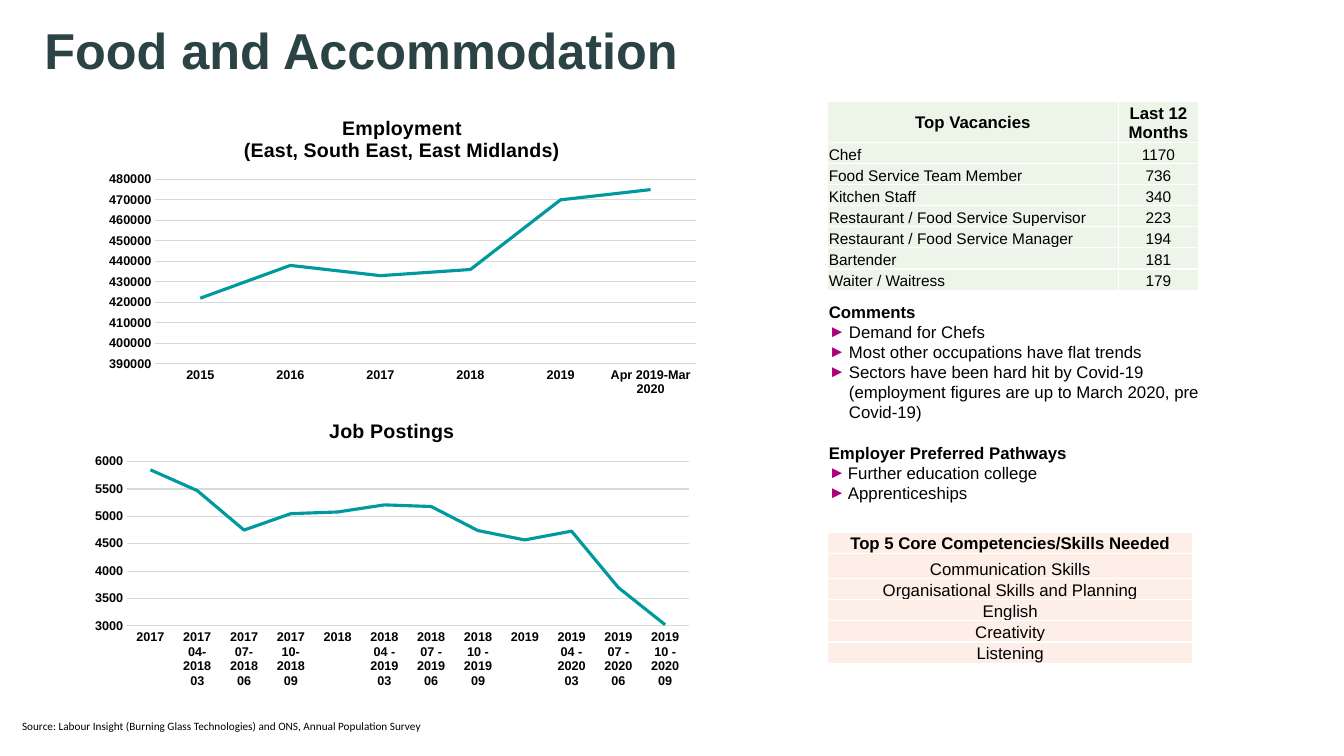
from lxml import etree
from pptx import Presentation
from pptx.chart.data import CategoryChartData
from pptx.dml.color import RGBColor
from pptx.enum.chart import XL_CHART_TYPE as ChartType, XL_TICK_MARK as TickMark
from pptx.enum.text import MSO_ANCHOR as Anchor, MSO_AUTO_SIZE as AutoSize, PP_ALIGN as Align
from pptx.oxml import parse_xml
from pptx.oxml.ns import nsdecls, qn
from pptx.util import Inches, Pt

BLACK, WHITE, SLATE = "000000", "FFFFFF", "2B4345"
TEAL, MAGENTA, GRID = "0099A0", "AD007A", "D9D9D9"
GREEN_TINT, PEACH_TINT = "EDF4E8", "FDEEE8"

EMPLOYMENT = {"2015": 422000, "2016": 438000, "2017": 433000, "2018": 436000,
              "2019": 470000, "Apr 2019-Mar 2020": 475000}
POSTINGS = {"2017": 5850, "2017 04-2018 03": 5470, "2017 07-2018 06": 4750,
            "2017 10-2018 09": 5050, "2018": 5080, "2018 04 - 2019 03": 5210,
            "2018 07 - 2019 06": 5180, "2018 10 - 2019 09": 4740, "2019": 4570,
            "2019 04 - 2020 03": 4730, "2019 07 - 2020 06": 3700,
            "2019 10 - 2020 09": 3020}
VACANCIES = [("Top Vacancies", "Last 12 Months"), ("Chef", "1170"),
             ("Food Service Team Member", "736"), ("Kitchen Staff", "340"),
             ("Restaurant / Food Service Supervisor", "223"),
             ("Restaurant / Food Service Manager", "194"),
             ("Bartender", "181"), ("Waiter / Waitress", "179")]
SKILLS = [("Top 5 Core Competencies/Skills Needed",), ("Communication Skills",),
          ("Organisational Skills and Planning",), ("English",), ("Creativity",),
          ("Listening",)]
NOTES = [("Comments", 0.2, ["Demand for Chefs", "Most other occupations have flat trends",
                            "Sectors have been hard hit by Covid-19 (employment figures "
                            "are up to March 2020, pre Covid-19)"]),
         ("Employer Preferred Pathways", 0.19, ["Further education college",
                                                "Apprenticeships"])]


def color(hex_value):
    return RGBColor.from_string(hex_value)


def style_font(font, size, bold=False, hex_value=BLACK, name="Arial"):
    font.name, font.size, font.bold = name, Pt(size), bold
    font.color.rgb = color(hex_value)


def add_run(paragraph, text, size, **style):
    run = paragraph.add_run()
    run.text = text
    style_font(run.font, size, **style)


def place(shape, box):
    shape.left, shape.top, shape.width, shape.height = (Inches(value) for value in box)


def set_layout(parent, index, chart_box, part_box):
    """Place a chart part, given in inches from the chart's corner."""
    old = parent.find(qn("c:layout"))
    if old is not None:
        parent.remove(old)
    target = '<c:layoutTarget val="inner"/>' if len(part_box) == 4 else ""
    modes = "".join(f'<c:{key}Mode val="edge"/>' for key in "xy")
    sizes = "".join(f'<c:{key} val="{length / whole:.4f}"/>'
                    for key, length, whole in zip("xywh", part_box, chart_box[2:] * 2))
    parent.insert(index, parse_xml(
        f'<c:layout {nsdecls("c")}><c:manualLayout>{target}{modes}{sizes}'
        '</c:manualLayout></c:layout>'))


def add_title(slide, box):
    title = slide.shapes.title
    place(title, box)
    frame = title.text_frame
    frame.vertical_anchor = Anchor.MIDDLE
    frame.auto_size = AutoSize.NONE
    paragraph = frame.paragraphs[0]
    paragraph.alignment = Align.LEFT
    paragraph.line_spacing = 0.9
    add_run(paragraph, "Food and Accommodation", 36, bold=True, hex_value=SLATE)


def add_line_chart(slide, box, title_lines, values, scale, title_at, plot_at):
    data = CategoryChartData()
    data.categories = list(values)
    data.add_series("Series 1", list(values.values()))
    chart = slide.shapes.add_chart(
        ChartType.LINE, *(Inches(value) for value in box), data).chart
    chart.has_legend = False
    style_font(chart.font, 10, bold=True)

    # Title
    chart.has_title = True
    frame = chart.chart_title.text_frame
    for number, line in enumerate(title_lines):
        paragraph = frame.add_paragraph() if number else frame.paragraphs[0]
        add_run(paragraph, line, 14, bold=True)
    set_layout(chart.chart_title._element, 1, box, title_at)
    set_layout(chart._chartSpace.chart.plotArea, 0, box, plot_at)

    # Axes
    category_axis, value_axis = chart.category_axis, chart.value_axis
    for axis in (category_axis, value_axis):
        axis.major_tick_mark = axis.minor_tick_mark = TickMark.NONE
        style_font(axis.tick_labels.font, 9, bold=True)
    category_axis._element.find(qn("c:txPr")).find(qn("a:bodyPr")).set("rot", "0")
    value_axis.minimum_scale, value_axis.maximum_scale, value_axis.major_unit = scale
    value_axis.has_major_gridlines = True
    value_axis.format.line.fill.background()
    for line in (category_axis.format.line, value_axis.major_gridlines.format.line):
        line.color.rgb = color(GRID)
        line.width = Pt(0.75)

    # Line
    chart.plots[0].vary_by_categories = False
    series = chart.plots[0].series[0]
    series.smooth = False
    series.format.line.color.rgb = color(TEAL)
    series.format.line.width = Pt(2.25)


def style_cell(cell, fill):
    cell.margin_left = cell.margin_top = cell.margin_right = Inches(0.01)
    cell.margin_bottom = 0
    properties = cell._tc.get_or_add_tcPr()
    for side in ("lnL", "lnR", "lnT", "lnB"):
        properties.append(parse_xml(
            f'<a:{side} {nsdecls("a")} w="12700"><a:solidFill><a:srgbClr val="{WHITE}"/>'
            f'</a:solidFill></a:{side}>'))
    cell.fill.solid()
    cell.fill.fore_color.rgb = color(fill)


def add_list_table(slide, box, rows, column_widths, row_heights, fill, body_size):
    table = slide.shapes.add_table(len(rows), len(column_widths),
                                   *(Inches(value) for value in box)).table
    table.first_row = table.horz_banding = False
    for column, width in zip(table.columns, column_widths):
        column.width = Inches(width)
    for r, (texts, height) in enumerate(zip(rows, row_heights)):
        table.rows[r].height = Inches(height)
        for c, text in enumerate(texts):
            cell = table.cell(r, c)
            style_cell(cell, fill)
            cell.vertical_anchor = Anchor.MIDDLE if r == c == 0 else Anchor.BOTTOM
            paragraph = cell.text_frame.paragraphs[0]
            left = r > 0 and c == 0 and len(texts) > 1
            paragraph.alignment = Align.LEFT if left else Align.CENTER
            add_run(paragraph, text, body_size if r else 12, bold=r == 0)


def set_bullet(paragraph, indent):
    properties = paragraph._p.get_or_add_pPr()
    properties.set("marL", str(Inches(indent)))
    properties.set("indent", str(-Inches(indent)))
    if not indent:
        etree.SubElement(properties, qn("a:buNone"))
        return
    bullet_color = etree.SubElement(properties, qn("a:buClr"))
    etree.SubElement(bullet_color, qn("a:srgbClr"), val=MAGENTA)
    etree.SubElement(properties, qn("a:buFont"), typeface="Arial")
    etree.SubElement(properties, qn("a:buChar"), char="►")


def add_notes_list(slide, box):
    body = slide.placeholders[1]
    place(body, box)
    frame = body.text_frame
    frame.word_wrap = True
    frame.auto_size = AutoSize.NONE
    frame.vertical_anchor = Anchor.TOP
    paragraph = frame.paragraphs[0]
    for section, (heading, indent, items) in enumerate(NOTES):
        if section:
            paragraph = frame.add_paragraph()
        set_bullet(paragraph, 0)
        paragraph.space_before = Pt(14.5 if section else 0)
        add_run(paragraph, heading, 12, bold=True)
        for item in items:
            paragraph = frame.add_paragraph()
            set_bullet(paragraph, indent)
            paragraph.space_before = Pt(0)
            add_run(paragraph, item, 12)


def add_source(slide, box):
    frame = slide.shapes.add_textbox(*(Inches(value) for value in box)).text_frame
    frame.word_wrap = True
    add_run(frame.paragraphs[0], "Source: Labour Insight (Burning Glass Technologies) and "
            "ONS, Annual Population Survey", 8, name="Calibri")


def main():
    presentation = Presentation()
    presentation.slide_width, presentation.slide_height = Inches(13.33), Inches(7.5)
    slide = presentation.slides.add_slide(presentation.slide_layouts[1])
    add_title(slide, (0.34, -0.2, 12.66, 1.45))
    add_line_chart(slide, (0.82, 4, 6.13, 2.89), ["Job Postings"], POSTINGS,
                   (3000, 6000, 500), (2.41, 0.11), (0.44, 0.58, 5.57, 1.63))
    add_notes_list(slide, (8.12, 2.94, 4.16, 2.52))
    add_list_table(slide, (8.21, 1.01, 3.68, 1.87), VACANCIES, [2.88, 0.8],
                   [0.4] + [0.21] * 7, GREEN_TINT, 11)
    add_list_table(slide, (8.21, 5.28, 3.62, 1.3), SKILLS, [3.62],
                   [0.21, 0.25] + [0.21] * 4, PEACH_TINT, 12)
    add_line_chart(slide, (0.97, 1, 6.05, 3),
                   ["Employment", "(East, South East, East Midlands)"], EMPLOYMENT,
                   (390000, 480000, 10000), (1.42, 0.12), (0.57, 0.78, 5.36, 1.83))
    add_source(slide, (0.12, 7.09, 5.45, 0.37))
    presentation.save("out.pptx")


if __name__ == "__main__":
    main()
